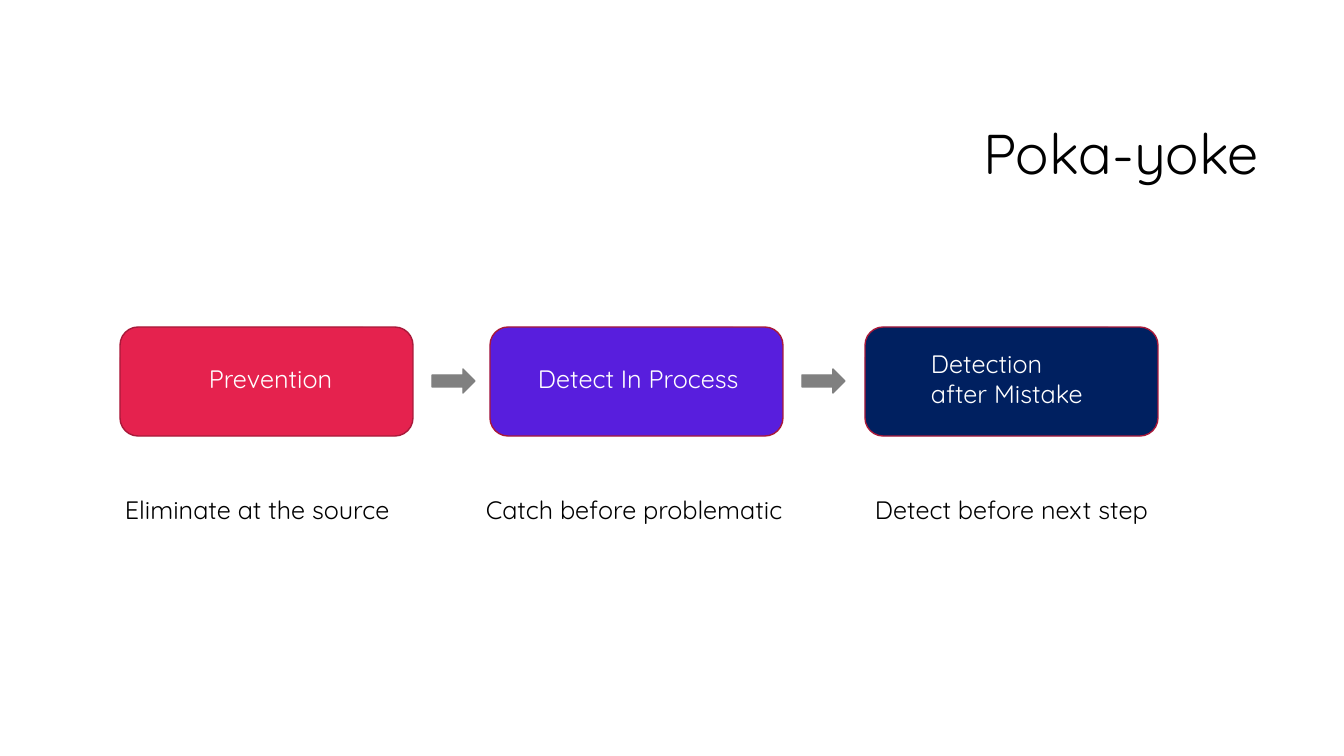
import dataclasses
import pptx
import pptx.dml.color
import pptx.enum.shapes
import pptx.enum.text
import pptx.slide
import pptx.util

RGB = pptx.dml.color.RGBColor
RED = RGB(0xE5, 0x22, 0x4E)
VIOLET = RGB(0x58, 0x1E, 0xDD)
NAVY = RGB(0x00, 0x20, 0x60)
EDGE = RGB(0xA9, 0x19, 0x3A)
GRAY = RGB(0x80, 0x80, 0x80)
WHITE = RGB(0xFF, 0xFF, 0xFF)
BLACK = RGB(0x00, 0x00, 0x00)

KIND = pptx.enum.shapes.MSO_SHAPE
ALIGN = pptx.enum.text.PP_ALIGN
FIT = pptx.enum.text.MSO_AUTO_SIZE
MIDDLE = pptx.enum.text.MSO_ANCHOR.MIDDLE
SCALE = 914400 / 100.8
FONT = "Quicksand"
CARD_TOP, CARD_WIDE, CARD_HIGH = 327, 293, 109
ARROW_GAP, ARROW_WIDE, ARROW_HIGH = 19, 43, 24
LINE_HIGH, NOTE_TOP = 40, 489


@dataclasses.dataclass(frozen=True)
class Box:
    left: int
    top: int
    width: int
    height: int

    def emu(self) -> list[int]:
        return [px(side) for side in dataclasses.astuple(self)]


@dataclasses.dataclass(frozen=True)
class Step:
    left: int
    fill: RGB
    label: str
    spot: Box
    note: str
    start: int
    width: int


STEPS = [
    Step(120, RED, "Prevention", Box(199, 358, 152, LINE_HIGH),
         "Eliminate at the source", 115, 302),
    Step(490, VIOLET, "Detect In Process", Box(528, 358, 234, LINE_HIGH),
         "Catch before problematic", 476, 348),
    Step(865, NAVY, "Detection\nafter Mistake", Box(921, 343, 179, 71),
         "Detect before next step", 865, 316),
]
TITLE = {"word_wrap": True, "auto_size": FIT.NONE, "vertical_anchor": MIDDLE}
LABEL = {"word_wrap": False, "auto_size": FIT.SHAPE_TO_FIT_TEXT}


def px(count: int) -> int:
    return round(count * SCALE)


def apply(target: object, values: dict) -> None:
    for name, value in values.items():
        setattr(target, name, value)


def draw_shape(slide: pptx.slide.Slide, kind: KIND, box: Box,
               fill: RGB, edge: RGB) -> None:
    shape = slide.shapes.add_shape(kind, *box.emu())
    shape.shadow.inherit = False
    shape.fill.solid()
    shape.fill.fore_color.rgb = fill
    shape.line.color.rgb = edge
    shape.line.width = pptx.util.Pt(1)


def draw_text(slide: pptx.slide.Slide, text: str, box: Box, color: RGB,
              size: int, frame: dict, para: dict) -> None:
    body = slide.shapes.add_textbox(*box.emu()).text_frame
    body.text = text
    apply(body, frame)
    for line in body.paragraphs:
        apply(line, para)
        apply(line.font, {"name": FONT, "size": pptx.util.Pt(size)})
        line.font.color.rgb = color


def main() -> None:
    deck = pptx.Presentation()
    apply(deck, {"slide_width": px(1344), "slide_height": px(756)})
    slide = deck.slides.add_slide(deck.slide_layouts[6])
    draw_text(slide, "Poka-yoke", Box(320, 85, 949, 142), BLACK, 40, TITLE,
              {"alignment": ALIGN.RIGHT, "line_spacing": 0.9})
    for step in STEPS:
        card = Box(step.left, CARD_TOP, CARD_WIDE, CARD_HIGH)
        draw_shape(slide, KIND.ROUNDED_RECTANGLE, card, step.fill, EDGE)
    for step in STEPS[:-1]:
        arrow = Box(step.left + CARD_WIDE + ARROW_GAP,
                    CARD_TOP + (CARD_HIGH - ARROW_HIGH) // 2,
                    ARROW_WIDE, ARROW_HIGH)
        draw_shape(slide, KIND.RIGHT_ARROW, arrow, GRAY, GRAY)
    left = {"alignment": ALIGN.LEFT}
    for step in STEPS:
        draw_text(slide, step.label, step.spot, WHITE, 18, LABEL, left)
        note = Box(step.start, NOTE_TOP, step.width, LINE_HIGH)
        draw_text(slide, step.note, note, BLACK, 18, LABEL, left)
    deck.save("out.pptx")


if __name__ == "__main__":
    main()
